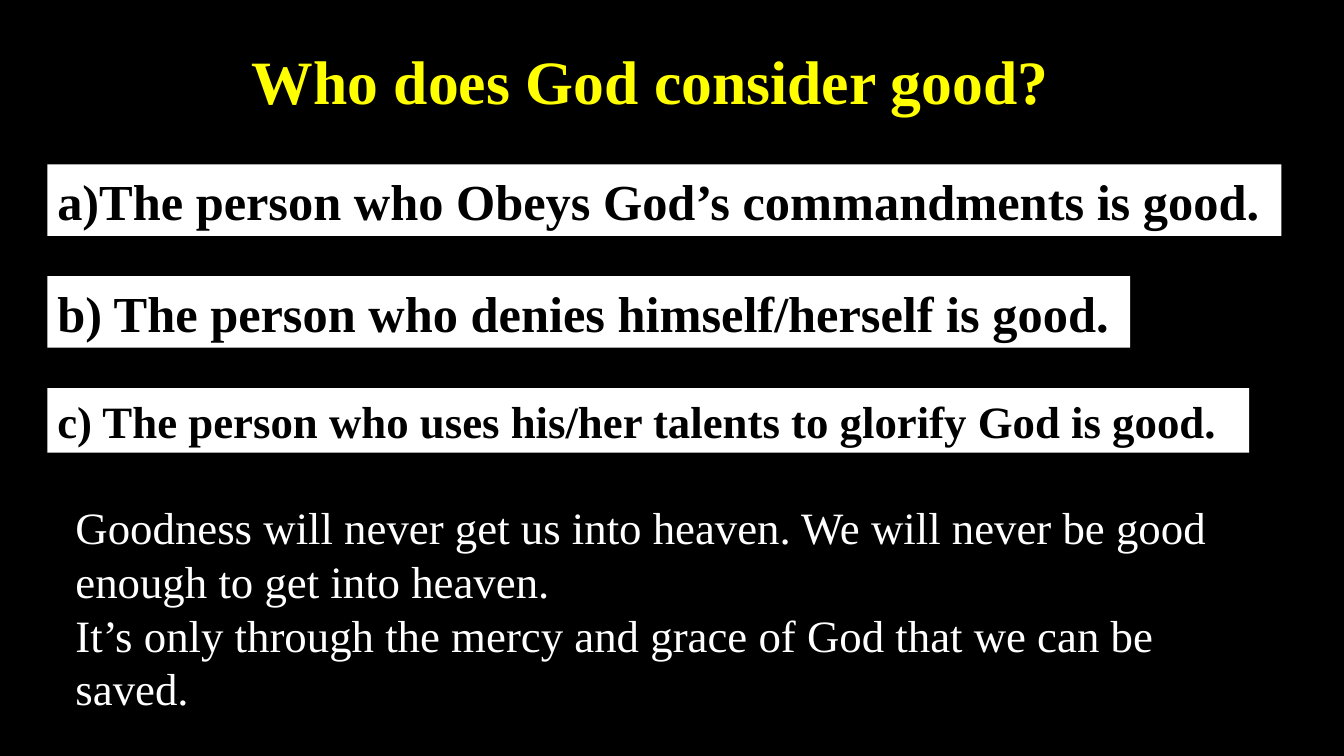
from dataclasses import dataclass

from lxml import etree
from pptx import Presentation
from pptx import util as u
from pptx.dml.color import RGBColor
from pptx.enum import shapes, text
from pptx.oxml import ns


@dataclass(frozen=True)
class Theme:
    font: str = "Times New Roman"
    black: str = "000000"
    white: str = "FFFFFF"
    yellow: str = "FFFF00"
    title: int = 44
    answer: int = 36
    body: int = 32


THEME = Theme()
ANSWER_LEFT, ANSWER_TOP, ANSWER_PITCH = 0.47, 1.63, 1.11
ANSWERS = [
    ("The person who Obeys God’s commandments is good.", 12.24, 0.71, THEME.answer),
    ("b) The person who denies himself/herself is good.", 10.74, 0.71, THEME.answer),
    ("c) The person who uses his/her talents to glorify God is good.", 11.92, 0.64, THEME.body),
]
CONCLUSION = [
    "Goodness will never get us into heaven. We will never be good enough to get into heaven.",
    "It’s only through the mercy and grace of God that we can be saved.",
]


def paint(fill, color):
    fill.solid()
    fill.fore_color.rgb = RGBColor.from_string(color)


def write(box, lines, size, color, bold=False, wrap=False):
    frame = box.text_frame
    frame.word_wrap = wrap
    frame.auto_size = text.MSO_AUTO_SIZE.SHAPE_TO_FIT_TEXT
    for index, line in enumerate(lines):
        para = frame.add_paragraph() if index else frame.paragraphs[0]
        para.alignment = text.PP_ALIGN.LEFT
        span = para.add_run()
        span.text = line
        span.font.name = THEME.font
        span.font.size = u.Pt(size)
        span.font.bold = bold
        span.font.color.rgb = RGBColor.from_string(color)


def indent(para, left, first=0):
    props = para._p.get_or_add_pPr()
    props.set("marL", str(u.Inches(left)))
    props.set("indent", str(u.Inches(first)))
    return props


def add_text(page, left, top, width, height):
    return page.shapes.add_textbox(*map(u.Inches, (left, top, width, height)))


def add_answer(page, row, line, width, height, size):
    top = ANSWER_TOP + row * ANSWER_PITCH
    box = page.shapes.add_shape(
        shapes.MSO_SHAPE.RECTANGLE, *map(u.Inches, (ANSWER_LEFT, top, width, height))
    )
    box.shadow.inherit = False
    box.line.fill.background()
    paint(box.fill, THEME.white)
    write(box, [line], size, THEME.black, bold=True)
    return box


def number_with_letter(para):
    props = indent(para, 0.38, -0.38)
    etree.SubElement(props, ns.qn("a:buFont"), typeface="+mj-lt")
    etree.SubElement(props, ns.qn("a:buAutoNum"), type="alphaLcParenR")


def main():
    deck = Presentation()
    deck.slide_width, deck.slide_height = u.Inches(13.33), u.Inches(7.5)
    page = deck.slides.add_slide(deck.slide_layouts[6])
    paint(page.background.fill, THEME.black)

    title = add_text(page, 2.34, 0.38, 8.24, 0.84)
    write(title, ["Who does God consider good?"], THEME.title, THEME.yellow, bold=True)
    indent(title.text_frame.paragraphs[0], 0.06)

    answers = [add_answer(page, row, *answer) for row, answer in enumerate(ANSWERS)]
    number_with_letter(answers[0].text_frame.paragraphs[0])

    conclusion = add_text(page, 0.65, 4.91, 11.64, 2.26)
    write(conclusion, CONCLUSION, THEME.body, THEME.white, wrap=True)

    deck.save("out.pptx")


if __name__ == "__main__":
    main()
